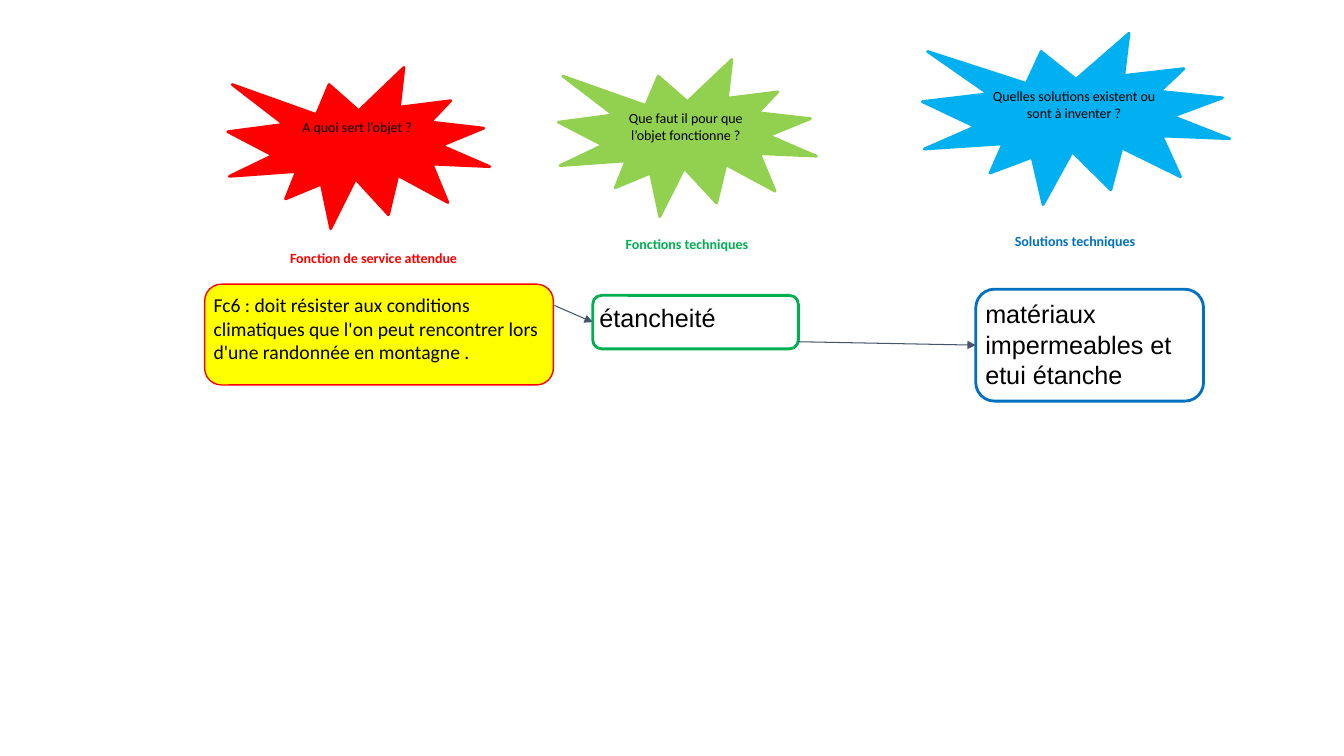
from typing import NamedTuple, Optional

from lxml.etree import SubElement
from pptx import Presentation
from pptx.dml.color import RGBColor
from pptx.enum.shapes import MSO_CONNECTOR, MSO_SHAPE
from pptx.enum.text import MSO_ANCHOR, PP_ALIGN
from pptx.oxml.ns import qn
from pptx.util import Pt

COLORS = {
    "red": "FF0000", "yellow": "FFFF00", "lime": "92D050", "green": "00B050",
    "sky": "00B0F0", "blue": "0070C0", "slate": "44546A", "black": "000000",
}
INSET = 2.9
LABEL_SIZE = (159.1, 24.5)


class Box(NamedTuple):
    text: str
    x: float
    y: float
    w: float
    h: float
    line: str
    fill: Optional[str] = None
    weight: float = 2
    size: float = 18
    font: str = "Arial"


class Label(NamedTuple):
    text: str
    x: float
    y: float
    color: str


class Burst(NamedTuple):
    text: str
    x: float
    y: float
    w: float
    h: float
    color: str


class Arrow(NamedTuple):
    x: float
    y: float
    target: int


BOXES = [
    Box("Fc6 : doit résister aux conditions climatiques que l'on peut rencontrer "
        "lors d'une randonnée en montagne .",
        146.2, 203, 249.1, 72, "red", "yellow", 1, 14, "Calibri"),
    Box("étancheité", 423.4, 211, 146.9, 38.2, "green"),
    Box("matériaux impermeables et etui étanche", 697, 206.6, 162.7, 79.9, "blue"),
]
LABELS = [
    Label("Fonction de service attendue", 187.2, 175.7, "red"),
    Label("Fonctions techniques", 411.1, 165.6, "green"),
    Label("Solutions techniques", 688.3, 163.4, "blue"),
]
BURSTS = [
    Burst("A quoi sert l’objet ?", 162.7, 48.2, 187.2, 115.2, "red"),
    Burst("Que faut il pour que l’objet fonctionne ?",
          398.9, 42.5, 184.3, 112.3, "lime"),
    Burst("Quelles solutions existent ou sont à inventer ?",
          658.8, 23.8, 219.6, 122.4, "sky"),
]
ARROWS = [Arrow(396, 218.2, 1), Arrow(570.2, 244.1, 2)]


def rgb(name: str) -> RGBColor:
    return RGBColor.from_string(COLORS[name])


def write(sp, text: str, *, size: float = 10, font: str = "Calibri",
          color: str = "black", bold: bool = False,
          align: PP_ALIGN = PP_ALIGN.CENTER) -> None:
    tf = sp.text_frame
    tf.word_wrap = True
    tf.vertical_anchor = MSO_ANCHOR.TOP
    tf.margin_left = tf.margin_right = tf.margin_top = tf.margin_bottom = Pt(INSET)
    p = tf.paragraphs[0]
    p.alignment = align
    r = p.add_run()
    r.text = text
    r.font.size = Pt(size)
    r.font.name = font
    r.font.bold = bold
    r.font.color.rgb = rgb(color)


def add_outline(s, kind: MSO_SHAPE, item, line: str, fill: Optional[str],
                weight: float):
    sp = s.shapes.add_shape(kind, Pt(item.x), Pt(item.y), Pt(item.w), Pt(item.h))
    sp.shadow.inherit = False
    if fill:
        sp.fill.solid()
        sp.fill.fore_color.rgb = rgb(fill)
    else:
        sp.fill.background()
    sp.line.color.rgb = rgb(line)
    sp.line.width = Pt(weight)
    return sp


def add_box(s, box: Box):
    sp = add_outline(s, MSO_SHAPE.ROUNDED_RECTANGLE, box, box.line, box.fill, box.weight)
    write(sp, box.text, size=box.size, font=box.font, align=PP_ALIGN.LEFT)
    return sp


def add_label(s, label: Label) -> None:
    w, h = LABEL_SIZE
    sp = s.shapes.add_textbox(Pt(label.x), Pt(label.y), Pt(w), Pt(h))
    write(sp, label.text, color=label.color, bold=True)


def add_burst(s, burst: Burst) -> None:
    sp = add_outline(s, MSO_SHAPE.EXPLOSION1, burst, burst.color, burst.color, 2)
    write(sp, burst.text)


def add_arrow(s, arrow: Arrow, target) -> None:
    x, y = Pt(arrow.x), Pt(arrow.y)
    cxn = s.shapes.add_connector(MSO_CONNECTOR.STRAIGHT, x, y, x, y)
    cxn.end_connect(target, 1)
    cxn.line.color.rgb = rgb("slate")
    cxn.line.width = Pt(0.75)
    SubElement(cxn.line._get_or_add_ln(), qn("a:tailEnd"), type="triangle")
    SubElement(cxn._element.spPr, qn("a:effectLst"))


def main() -> None:
    prs = Presentation()
    prs.slide_width, prs.slide_height = Pt(960), Pt(540)
    s = prs.slides.add_slide(prs.slide_layouts[6])
    boxes = [add_box(s, box) for box in BOXES]
    for label in LABELS:
        add_label(s, label)
    for burst in BURSTS:
        add_burst(s, burst)
    for arrow in ARROWS:
        add_arrow(s, arrow, boxes[arrow.target])
    prs.save("out.pptx")


if __name__ == "__main__":
    main()
